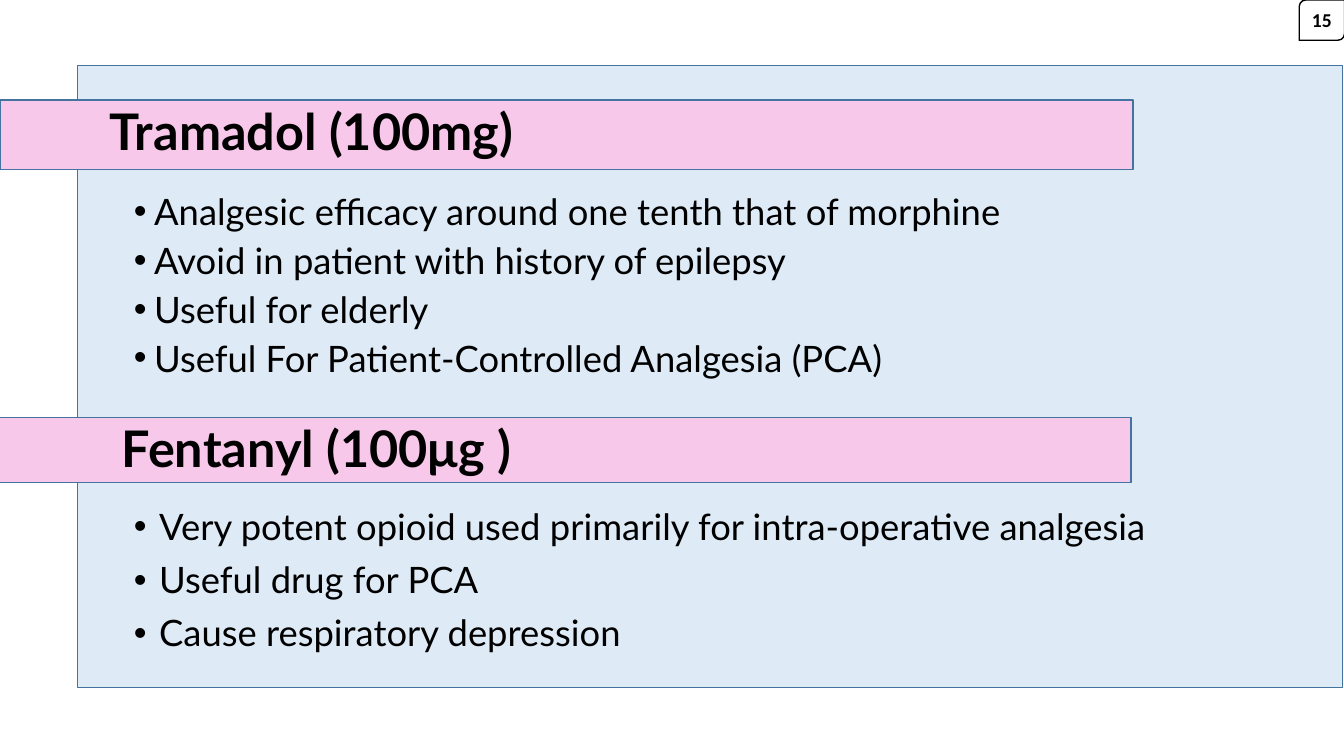
import pptx
import pptx.util
import pptx.dml.color
import pptx.enum.shapes
import pptx.enum.text
import pptx.oxml.ns
from lxml import etree

Pt = pptx.util.Pt
SHAPES = pptx.enum.shapes.MSO_SHAPE
ALIGN = pptx.enum.text.PP_ALIGN
ANCHOR = pptx.enum.text.MSO_ANCHOR

PANEL, BANNER, OUTLINE = "DEEBF7", "F8C8EB", "43739E"
BLACK, WHITE = "000000", "FFFFFF"


def colour(value):
    return pptx.dml.color.RGBColor.from_string(value)


def place(box, left, top, width, height):
    box.left, box.top = Pt(left), Pt(top)
    box.width, box.height = Pt(width), Pt(height)


def set_font(para, size, name, bold=False):
    para.font.size = Pt(size)
    para.font.name = name
    para.font.bold = bold
    para.font.color.rgb = colour(BLACK)


def add_block(page, kind, bounds, fill, line):
    block = page.shapes.add_shape(kind, *map(Pt, bounds))
    block.shadow.inherit = False
    block.fill.solid()
    block.fill.fore_color.rgb = colour(fill)
    block.line.color.rgb = colour(line)
    block.line.width = Pt(1)
    return block


def write_heading(box, text):
    frame = box.text_frame
    frame.word_wrap = True
    frame.auto_size = pptx.enum.text.MSO_AUTO_SIZE.NONE
    frame.vertical_anchor = ANCHOR.MIDDLE
    frame.text = text
    para = frame.paragraphs[0]
    para.alignment = ALIGN.LEFT
    para.line_spacing = 0.9
    set_font(para, 36, "Lato", bold=True)


def add_bullets(page, bounds, lines, indent, spacing):
    frame = page.shapes.add_textbox(*map(Pt, bounds)).text_frame
    frame.word_wrap = True
    for index, line in enumerate(lines):
        para = frame.add_paragraph() if index else frame.paragraphs[0]
        para.text = line
        para.line_spacing = spacing
        if index:
            para.space_before = Pt(10)
        properties = para._p.get_or_add_pPr()
        properties.set("marL", str(Pt(indent)))
        properties.set("indent", str(-Pt(indent)))
        font = etree.SubElement(properties, pptx.oxml.ns.qn("a:buFont"))
        font.set("typeface", "Arial")
        bullet = etree.SubElement(properties, pptx.oxml.ns.qn("a:buChar"))
        bullet.set("char", "•")
        set_font(para, 26, "Lato")


def add_page_number(page, number):
    badge = add_block(page, SHAPES.ROUND_2_DIAG_RECTANGLE,
                      (928, 0, 32.4, 28.8), WHITE, BLACK)
    frame = badge.text_frame
    frame.vertical_anchor = ANCHOR.MIDDLE
    frame.text = number
    para = frame.paragraphs[0]
    para.alignment = ALIGN.CENTER
    set_font(para, 14, "Calibri", bold=True)


def main():
    deck = pptx.Presentation()
    deck.slide_width, deck.slide_height = Pt(960), Pt(540)
    page = deck.slides.add_slide(deck.slide_layouts[5])

    # Panel and heading banners
    for bounds, fill in (
        ((55.4, 46.8, 903.6, 444.2), PANEL),
        ((0, 71.3, 809.3, 49.7), BANNER),
        ((-1.4, 298, 809.3, 46.8), BANNER),
    ):
        add_block(page, SHAPES.RECTANGLE, bounds, fill, OUTLINE)

    # Tramadol: the title goes in front of its banner
    title = page.shapes.title
    title.element.getparent().append(title.element)
    place(title, 71.3, 65.5, 786, 61.2)
    write_heading(title, "Tramadol (100mg)")
    add_bullets(page, (88.6, 137.5, 814.3, 170), (
        "Analgesic efficacy around one tenth that of morphine",
        "Avoid in patient with history of epilepsy",
        "Useful for elderly",
        "Useful For Patient-Controlled Analgesia (PCA)",
    ), indent=14.4, spacing=0.8)

    # Fentanyl
    heading = page.shapes.add_textbox(Pt(80), Pt(291.6), Pt(778), Pt(61.2))
    write_heading(heading, "Fentanyl (100μg )")
    add_bullets(page, (88.6, 360, 814.3, 130), (
        "Very potent opioid used primarily for intra-operative analgesia",
        "Useful drug for PCA",
        "Cause respiratory depression",
    ), indent=18, spacing=0.9)

    add_page_number(page, "15")
    deck.save("out.pptx")


if __name__ == "__main__":
    main()
